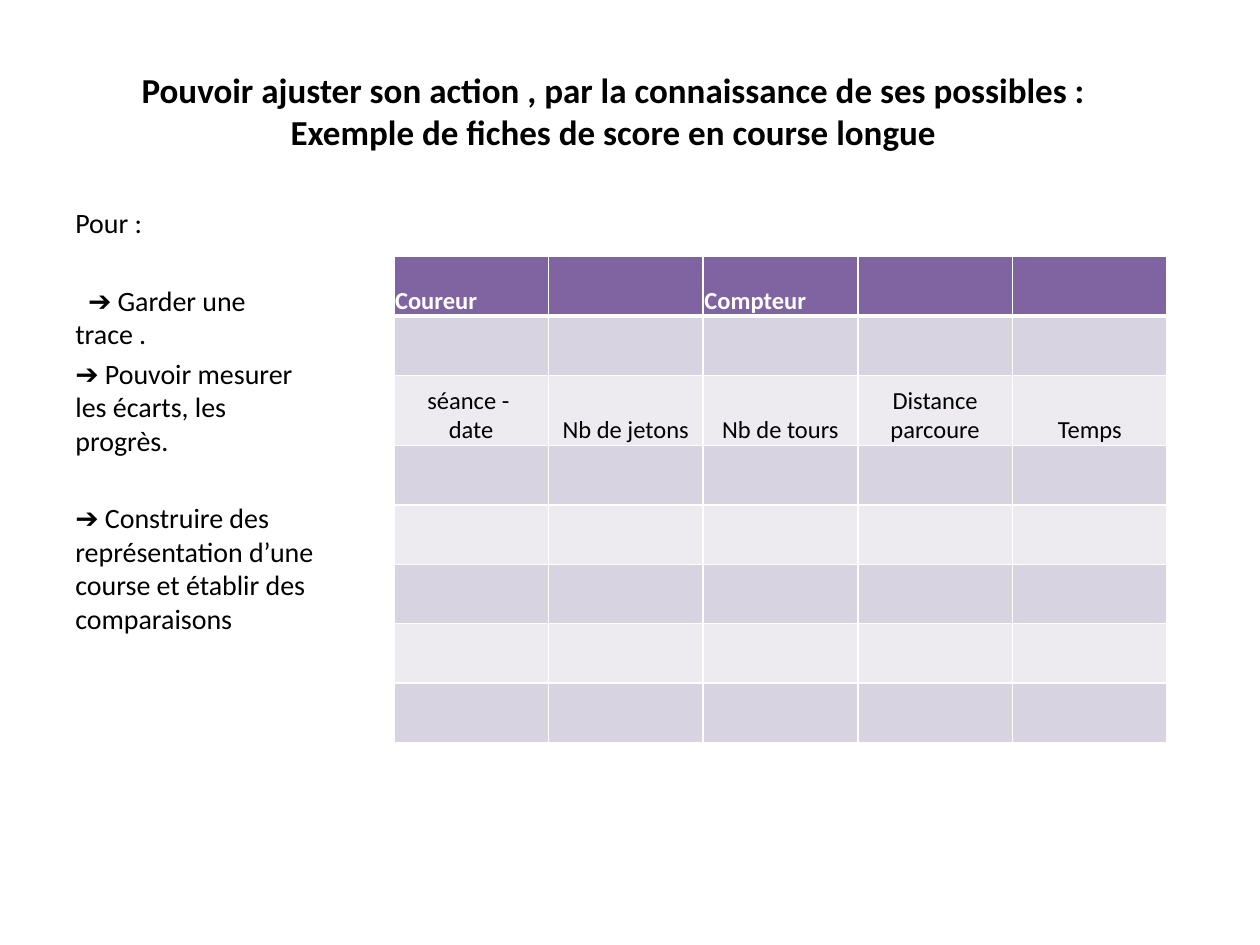
from lxml import etree
from pptx import Presentation
from pptx.dml.color import RGBColor
from pptx.enum.text import MSO_ANCHOR, PP_ALIGN
from pptx.oxml.ns import qn
from pptx.util import Pt

LEFT, CENTER = PP_ALIGN.LEFT, PP_ALIGN.CENTER
TOP, BOTTOM = MSO_ANCHOR.TOP, MSO_ANCHOR.BOTTOM
TITLE_ONLY = 5
FONT = "Calibri"
BLACK, WHITE = "000000", "FFFFFF"
PURPLE, LILAC, PALE = "8064A2", "D8D3E0", "EDEAF0"

HEADING = ("Pouvoir ajuster son action , par la connaissance de ses possibles :\v"
           "Exemple de fiches de score en course longue")
PURPOSES = [
    ("Pour :", 0, 0),
    ("➔ Garder une trace .", 25, 7.2),
    ("➔ Pouvoir mesurer les écarts, les progrès.", 3.5, 0),
    ("➔ Construire des représentation d’une course et établir des comparaisons", 25, 0),
]
RUNNER_LABELS = ["Coureur", "", "Compteur", "", ""]
SCORE_LABELS = ["séance - \vdate", "Nb de jetons", "Nb de tours",
                "Distance parcoure", "Temps"]
ROW_HEIGHTS = [34, 34, 40, 34, 34, 34, 34, 34]


def rgb(value):
    return RGBColor.from_string(value)


def style_runs(paragraph, size, color, bold=False):
    for run in paragraph.runs:
        run.font.name = FONT
        run.font.size = Pt(size)
        run.font.bold = bold
        run.font.color.rgb = rgb(color)


def add_heading(slide, left, top, width, height):
    heading = slide.shapes.title
    heading.left, heading.top = Pt(left), Pt(top)
    heading.width, heading.height = Pt(width), Pt(height)
    frame = heading.text_frame
    frame.text = HEADING
    frame.vertical_anchor = BOTTOM
    frame.paragraphs[0].alignment = CENTER
    style_runs(frame.paragraphs[0], 20, BLACK, True)


def add_purposes(slide, left, top, width, height):
    purposes = slide.shapes.add_textbox(Pt(left), Pt(top), Pt(width), Pt(height))
    frame = purposes.text_frame
    frame.word_wrap = True
    frame.vertical_anchor = TOP
    for index, (text, gap, indent) in enumerate(PURPOSES):
        paragraph = frame.paragraphs[0] if index == 0 else frame.add_paragraph()
        paragraph.text = text
        paragraph.alignment = LEFT
        if gap:
            paragraph.space_before = Pt(gap)
        if indent:
            paragraph._p.get_or_add_pPr().set("indent", str(Pt(indent)))
        style_runs(paragraph, 16, BLACK)


def add_borders(cell, top, bottom):
    properties = cell._tc.get_or_add_tcPr()
    for side, weight in (("L", 1), ("R", 1), ("T", top), ("B", bottom)):
        line = etree.SubElement(properties, qn(f"a:ln{side}"), w=str(Pt(weight)))
        fill = etree.SubElement(line, qn("a:solidFill"))
        etree.SubElement(fill, qn("a:srgbClr"), val=WHITE)


def fill_label(cell, text, alignment, color, bold):
    cell.text = text
    cell.vertical_anchor = BOTTOM
    cell.margin_left = cell.margin_right = cell.margin_top = Pt(0.75)
    cell.margin_bottom = Pt(0)
    paragraph = cell.text_frame.paragraphs[0]
    paragraph.alignment = alignment
    style_runs(paragraph, 14, color, bold)


def add_score_sheet(slide, left, top, width):
    columns = len(SCORE_LABELS)
    sheet = slide.shapes.add_table(len(ROW_HEIGHTS), columns, Pt(left), Pt(top),
                                   Pt(width), Pt(sum(ROW_HEIGHTS))).table
    for column in sheet.columns:
        column.width = Pt(width / columns)
    for index, height in enumerate(ROW_HEIGHTS):
        sheet.rows[index].height = Pt(height)
        row_color = PURPLE if index == 0 else LILAC if index % 2 else PALE
        for cell in sheet.rows[index].cells:
            add_borders(cell, 3 if index == 1 else 1, 3 if index == 0 else 1)
            cell.fill.solid()
            cell.fill.fore_color.rgb = rgb(row_color)
    for column in range(columns):
        if RUNNER_LABELS[column]:
            fill_label(sheet.cell(0, column), RUNNER_LABELS[column], LEFT, WHITE, True)
        fill_label(sheet.cell(2, column), SCORE_LABELS[column], CENTER, BLACK, False)


def main():
    presentation = Presentation()
    presentation.slide_width, presentation.slide_height = Pt(720), Pt(540)
    slide = presentation.slides.add_slide(presentation.slide_layouts[TITLE_ONLY])
    add_heading(slide, 34, 28, 633, 63)
    add_purposes(slide, 36, 114, 154, 325)
    add_score_sheet(slide, 225, 146.5, 442)
    presentation.save("out.pptx")


if __name__ == "__main__":
    main()
